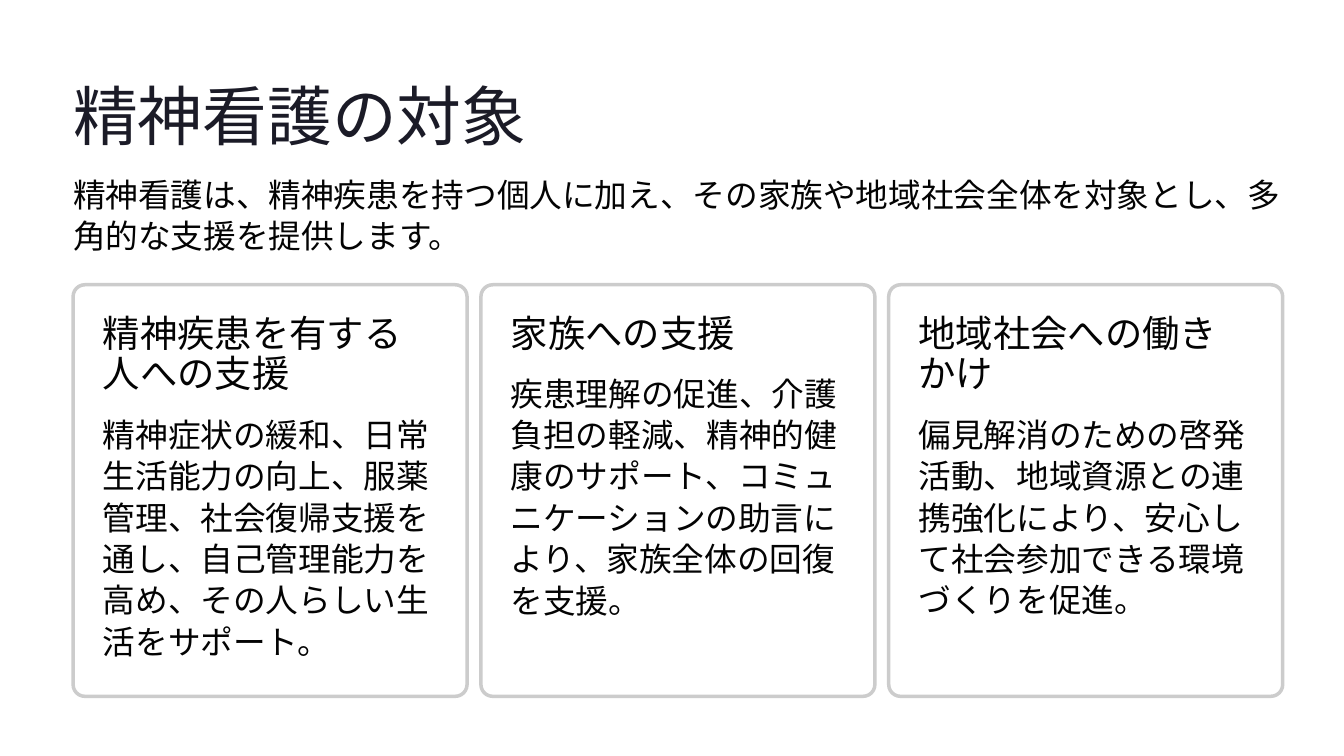
from lxml.etree import SubElement
from pptx import Presentation
from pptx.dml.color import RGBColor
from pptx.enum.lang import MSO_LANGUAGE_ID
from pptx.enum.shapes import MSO_SHAPE
from pptx.oxml.ns import qn
from pptx.util import Inches, Pt

MARGIN = 0.87
CARD_WIDTH, CARD_HEIGHT, CARD_STEP = 4.69, 4.9, 4.855
CARD_PADDING = 0.355
HEADING_LINE = 0.54
INK = "030303"
CARDS = [
    ("精神疾患を有する人への支援", 2,
     "精神症状の緩和、日常生活能力の向上、服薬管理、社会復帰支援を通し、自己管理能力を高め、その人らしい生活をサポート。"),
    ("家族への支援", 1,
     "疾患理解の促進、介護負担の軽減、精神的健康のサポート、コミュニケーションの助言により、家族全体の回復を支援。"),
    ("地域社会への働きかけ", 2,
     "偏見解消のための啓発活動、地域資源との連携強化により、安心して社会参加できる環境づくりを促進。"),
]


def color(value):
    """Turn a hex string into a colour."""
    return RGBColor.from_string(value)


def add_text(slide, text, box, size, leading, font="Cabin", ink=INK, wrap=True):
    """Place one paragraph of text in a box given in inches."""
    frame = slide.shapes.add_textbox(*map(Inches, box)).text_frame
    frame.word_wrap = wrap
    frame.margin_left = frame.margin_right = 0
    frame.margin_top = frame.margin_bottom = 0
    paragraph = frame.paragraphs[0]
    paragraph.line_spacing = Pt(leading)
    run = paragraph.add_run()
    run.text = text
    run.font.size = Pt(size)
    run.font.name = font
    run.font.color.rgb = color(ink)
    run.font.language_id = MSO_LANGUAGE_ID.JAPANESE
    SubElement(run.font._element, qn("a:ea"), typeface=font)


def add_header(slide, left, top, width):
    """Place the title and the introduction below it."""
    add_text(slide, "精神看護の対象", (left, top, 7.78, 0.97), 55.5, 69.5,
             font="Inter", ink="1B1B27", wrap=False)
    add_text(slide, "精神看護は、精神疾患を持つ個人に加え、その家族や地域社会全体を対象とし、"
             "多角的な支援を提供します。", (left, top + 1.19, width, 1.12), 28, 35.5)


def add_card(slide, left, top, heading, heading_lines, body):
    """Place a rounded card with its heading and body text."""
    box = (left, top, CARD_WIDTH, CARD_HEIGHT)
    card = slide.shapes.add_shape(MSO_SHAPE.ROUNDED_RECTANGLE, *map(Inches, box))
    card.adjustments[0] = 0.03
    card.shadow.inherit = False
    card.fill.solid()
    card.fill.fore_color.rgb = color("FFFFFF")
    fill_color = card._element.spPr.find(qn("a:solidFill"))[0]
    SubElement(fill_color, qn("a:alpha"), val="95000")
    card.line.color.rgb = color("CCCCCC")
    card.line.width = Pt(3)

    text_left, text_top = left + CARD_PADDING, top + CARD_PADDING
    text_width = CARD_WIDTH - 2 * CARD_PADDING
    heading_height = heading_lines * HEADING_LINE
    add_text(slide, heading, (text_left, text_top, text_width, heading_height),
             32, 34.5, font="Inter", wrap=heading_lines > 1)
    body_top = top + 1.03 + (heading_lines - 1) * 0.49
    add_text(slide, body, (text_left, body_top, text_width, 2.8), 28, 35.5)


def main():
    """Build the slide and save it."""
    presentation = Presentation()
    presentation.slide_width, presentation.slide_height = Inches(16), Inches(9)
    slide = presentation.slides.add_slide(presentation.slide_layouts[6])
    add_header(slide, MARGIN, 0.86, 14.73)
    for index, content in enumerate(CARDS):
        add_card(slide, MARGIN + index * CARD_STEP, 3.39, *content)
    presentation.save("out.pptx")


if __name__ == "__main__":
    main()
